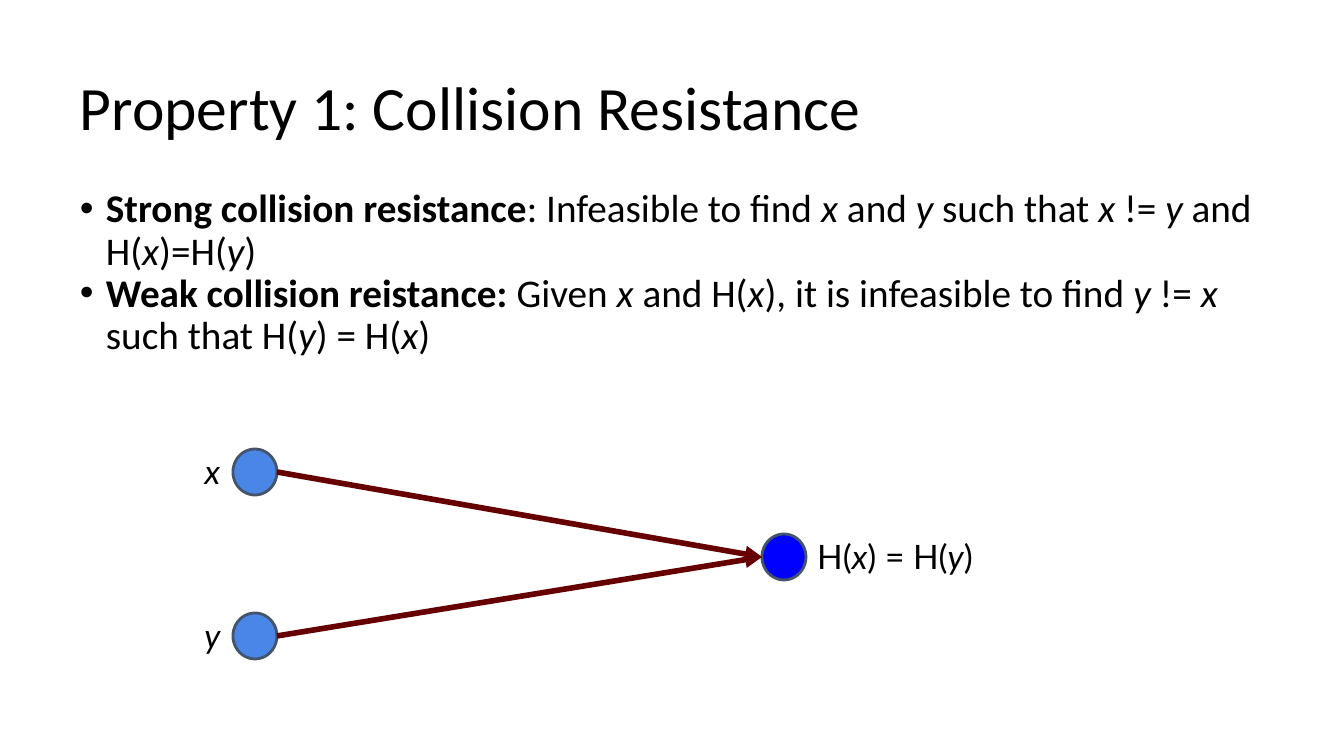
from lxml.etree import SubElement
from pptx import Presentation
from pptx.dml.color import RGBColor
from pptx.enum.shapes import MSO_CONNECTOR, MSO_SHAPE
from pptx.enum.text import MSO_ANCHOR, PP_ALIGN
from pptx.oxml.ns import qn
from pptx.util import Pt

EMU_PER_PX = 914400 / 134.4
BLACK = RGBColor(0x00, 0x00, 0x00)
INPUT_BLUE = RGBColor(0x4A, 0x86, 0xE8)
HASH_BLUE = RGBColor(0x00, 0x00, 0xFF)
OUTLINE = RGBColor(0x44, 0x54, 0x6A)
ARROW_RED = RGBColor(0x66, 0x00, 0x00)

TITLE = "Property 1: Collision Resistance"
BULLETS = [
    ("Strong collision resistance",
     ": Infeasible to find *x* and *y* such that *x* != *y* and H(*x*)=H(*y*)"),
    ("Weak collision reistance:",
     " Given *x* and H(*x*), it is infeasible to find *y* != *x* such that H(*y*) = H(*x*)"),
]
INPUTS = [("*x*", 449), ("*y*", 613)]
HASH_LABEL = "H(*x*) = H(*y*)"

NODE_WIDTH, NODE_HEIGHT = 44, 46
INPUT_LEFT = 233
HASH_LEFT, HASH_TOP = 762, 534
LABEL_HEIGHT, LABEL_RISE = 67, 11
INSET = 13
INDENT = 26


def px(length):
    """Turn pixels into EMU."""
    return round(length * EMU_PER_PX)


def add_box(page, left, top, width, height):
    """Add an empty wrapping text box and return its frame."""
    box = page.shapes.add_textbox(px(left), px(top), px(width), px(height))
    frame = box.text_frame
    frame.word_wrap = True
    frame.margin_left = frame.margin_right = px(INSET)
    frame.margin_top = frame.margin_bottom = px(INSET)
    return frame


def write(para, text, size, face, bold=False):
    """Append runs to a paragraph, with text between asterisks in italics."""
    for index, part in enumerate(text.split("*")):
        if part:
            span = para.add_run()
            span.text = part
            font = span.font
            font.name, font.size = face, Pt(size)
            font.bold, font.italic = bold, index % 2 == 1
            font.color.rgb = BLACK


def add_bullet(para):
    """Give a paragraph a hanging bullet."""
    properties = para._p.get_or_add_pPr()
    properties.set("marL", str(px(INDENT)))
    properties.set("indent", str(-px(INDENT)))
    SubElement(properties, qn("a:buFont"), typeface="Arial")
    SubElement(properties, qn("a:buChar"), char="•")


def add_label(page, text, left, node_top, width):
    """Add a centred label level with a node."""
    frame = add_box(page, left, node_top - LABEL_RISE, width, LABEL_HEIGHT)
    para = frame.paragraphs[0]
    para.alignment = PP_ALIGN.CENTER
    write(para, text, 18, "Lato")


def add_node(page, left, top, color):
    """Add an outlined ellipse."""
    node = page.shapes.add_shape(
        MSO_SHAPE.OVAL, px(left), px(top), px(NODE_WIDTH), px(NODE_HEIGHT))
    node.shadow.inherit = False
    node.fill.solid()
    node.fill.fore_color.rgb = color
    node.line.color.rgb = OUTLINE
    node.line.width = Pt(1.5)
    return node


def add_arrow(page, source, target):
    """Join the right side of one node to the left side of another."""
    arrow = page.shapes.add_connector(
        MSO_CONNECTOR.STRAIGHT,
        source.left + source.width, source.top + source.height // 2,
        target.left, target.top + target.height // 2)
    arrow.line.color.rgb = ARROW_RED
    arrow.line.width = Pt(3)
    SubElement(arrow.line._get_or_add_ln(), qn("a:tailEnd"), type="triangle")
    SubElement(arrow._element.spPr, qn("a:effectLst"))


def main():
    """Build and save the slide."""
    deck = Presentation()
    deck.slide_width, deck.slide_height = px(1344), px(756)
    page = deck.slides.add_slide(deck.slide_layouts[6])

    frame = add_box(page, 67, 31, 1210, 126)
    frame.vertical_anchor = MSO_ANCHOR.BOTTOM
    frame.paragraphs[0].line_spacing = 0.9
    write(frame.paragraphs[0], TITLE, 33, "Calibri")

    frame = add_box(page, 67, 176, 1210, 547)
    for index, (term, meaning) in enumerate(BULLETS):
        para = frame.add_paragraph() if index else frame.paragraphs[0]
        para.line_spacing = 0.9
        add_bullet(para)
        write(para, term, 21, "Calibri", bold=True)
        write(para, meaning, 21, "Calibri")

    hash_node = add_node(page, HASH_LEFT, HASH_TOP, HASH_BLUE)
    add_label(page, HASH_LABEL, 792, HASH_TOP, 206)
    for name, top in INPUTS:
        node = add_node(page, INPUT_LEFT, top, INPUT_BLUE)
        add_label(page, name, 183, top, 59)
        add_arrow(page, node, hash_node)

    deck.save("out.pptx")


if __name__ == "__main__":
    main()
